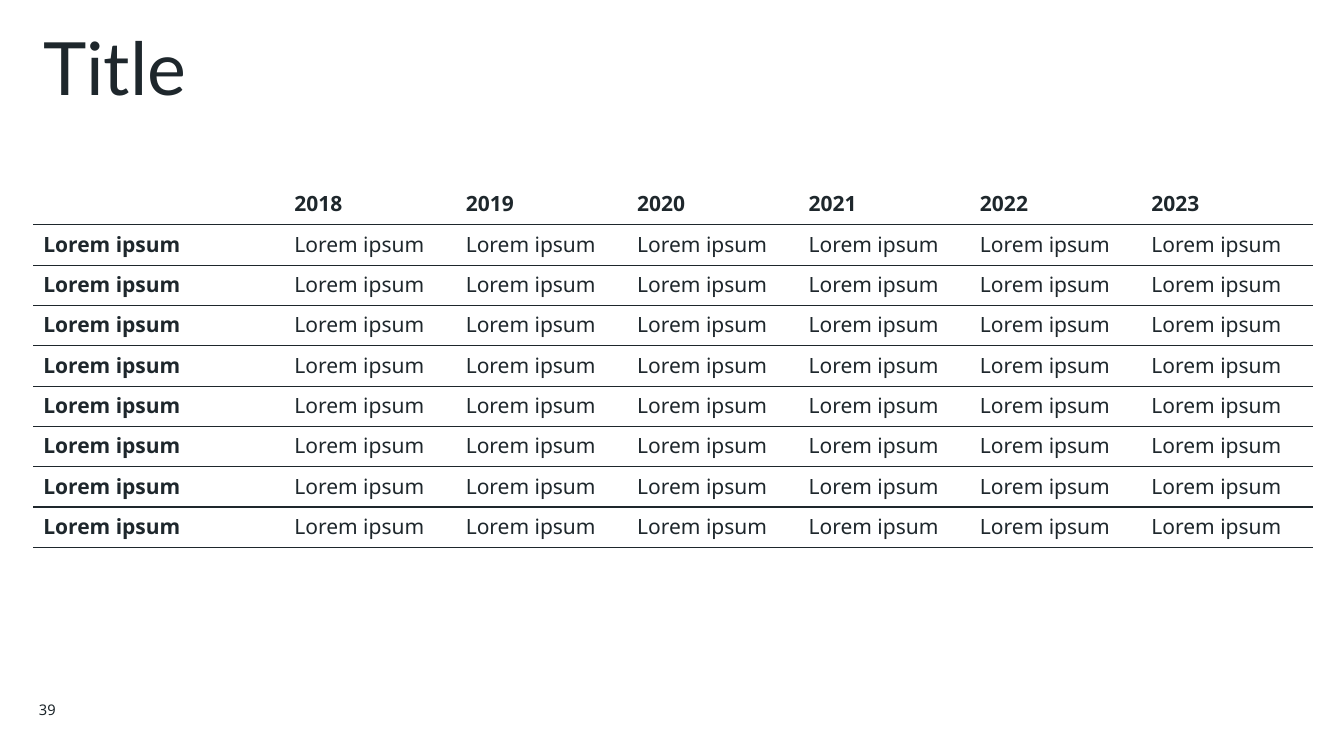
"""Build a slide with a title, a ruled table of years and a page number."""
from dataclasses import dataclass

from lxml import etree
from pptx import Presentation
from pptx import util as u
from pptx.dml.color import RGBColor
from pptx.enum import text
from pptx.oxml.ns import qn
from pptx.slide import Slide
from pptx.table import _Cell
from pptx.text.text import _Paragraph

EMU_PER_PX = 9144
INK = "1E272C"
BODY_FONT = "Noto Sans"
YEARS = [str(year) for year in range(2018, 2024)]
FILLER = "Lorem ipsum"
BODY_ROWS = 8
TABLE_LEFT, TABLE_TOP = 33, 183
LABEL_WIDTH, YEAR_WIDTH, ROW_HEIGHT = 249, 170, 40
RULE_WIDTH = u.Pt(1)


@dataclass(frozen=True)
class Label:
    content: str
    left: int
    top: int
    width: int
    height: int
    font: str
    size: float
    line_spacing: float = 1.0
    align: text.PP_ALIGN = text.PP_ALIGN.LEFT
    anchor: text.MSO_ANCHOR = text.MSO_ANCHOR.TOP


LABELS = [
    Label("Title", 33, 30, 1268, 153, "Lato", 52.5, line_spacing=0.85),
    Label("39", 0, 684, 65, 40, BODY_FONT, 10.5,
          align=text.PP_ALIGN.RIGHT, anchor=text.MSO_ANCHOR.MIDDLE),
]


def px(length: int) -> u.Emu:
    return u.Emu(length * EMU_PER_PX)


def color(value: str) -> RGBColor:
    return RGBColor.from_string(value)


def write(paragraph: _Paragraph, content: str, font: str, size: float, bold: bool = False) -> None:
    run = paragraph.add_run()
    run.text = content
    for name, value in {"name": font, "size": u.Pt(size), "bold": bold}.items():
        setattr(run.font, name, value)
    run.font.color.rgb = color(INK)


def draw_label(slide: Slide, label: Label) -> None:
    shape = slide.shapes.add_textbox(
        px(label.left), px(label.top), px(label.width), px(label.height))
    frame = shape.text_frame
    frame.word_wrap = True
    frame.vertical_anchor = label.anchor
    paragraph = frame.paragraphs[0]
    paragraph.alignment = label.align
    paragraph.line_spacing = label.line_spacing
    write(paragraph, label.content, label.font, label.size)


def style_cell(cell: _Cell, rules: set[str]) -> None:
    properties = cell._tc.get_or_add_tcPr()
    for edge in ("lnL", "lnR", "lnT", "lnB"):
        line = etree.SubElement(properties, qn(f"a:{edge}"), w=str(RULE_WIDTH))
        if edge in rules:
            fill = etree.SubElement(line, qn("a:solidFill"))
            etree.SubElement(fill, qn("a:srgbClr"), val=INK)
        else:
            etree.SubElement(line, qn("a:noFill"))
    cell.fill.background()


def draw_table(slide: Slide) -> None:
    rows = [["", *YEARS]] + [[FILLER] * (len(YEARS) + 1)] * BODY_ROWS
    widths = [LABEL_WIDTH] + [YEAR_WIDTH] * len(YEARS)
    table = slide.shapes.add_table(
        len(rows), len(widths), px(TABLE_LEFT), px(TABLE_TOP),
        px(sum(widths)), px(ROW_HEIGHT * len(rows))).table
    table.first_row = table.horz_banding = False
    for column, width in zip(table.columns, widths):
        column.width = px(width)
    for row_index, row in enumerate(rows):
        table.rows[row_index].height = px(ROW_HEIGHT)
        rules = {"lnT", "lnB"} if row_index else {"lnB"}
        for column_index, content in enumerate(row):
            cell = table.cell(row_index, column_index)
            style_cell(cell, rules)
            bold = row_index == 0 or column_index == 0
            write(cell.text_frame.paragraphs[0], content, BODY_FONT, 15, bold)


def main() -> None:
    presentation = Presentation()
    presentation.slide_width, presentation.slide_height = px(1333), px(750)
    slide = presentation.slides.add_slide(presentation.slide_layouts[6])
    for label in LABELS:
        draw_label(slide, label)
    draw_table(slide)
    presentation.save("out.pptx")


if __name__ == "__main__":
    main()
